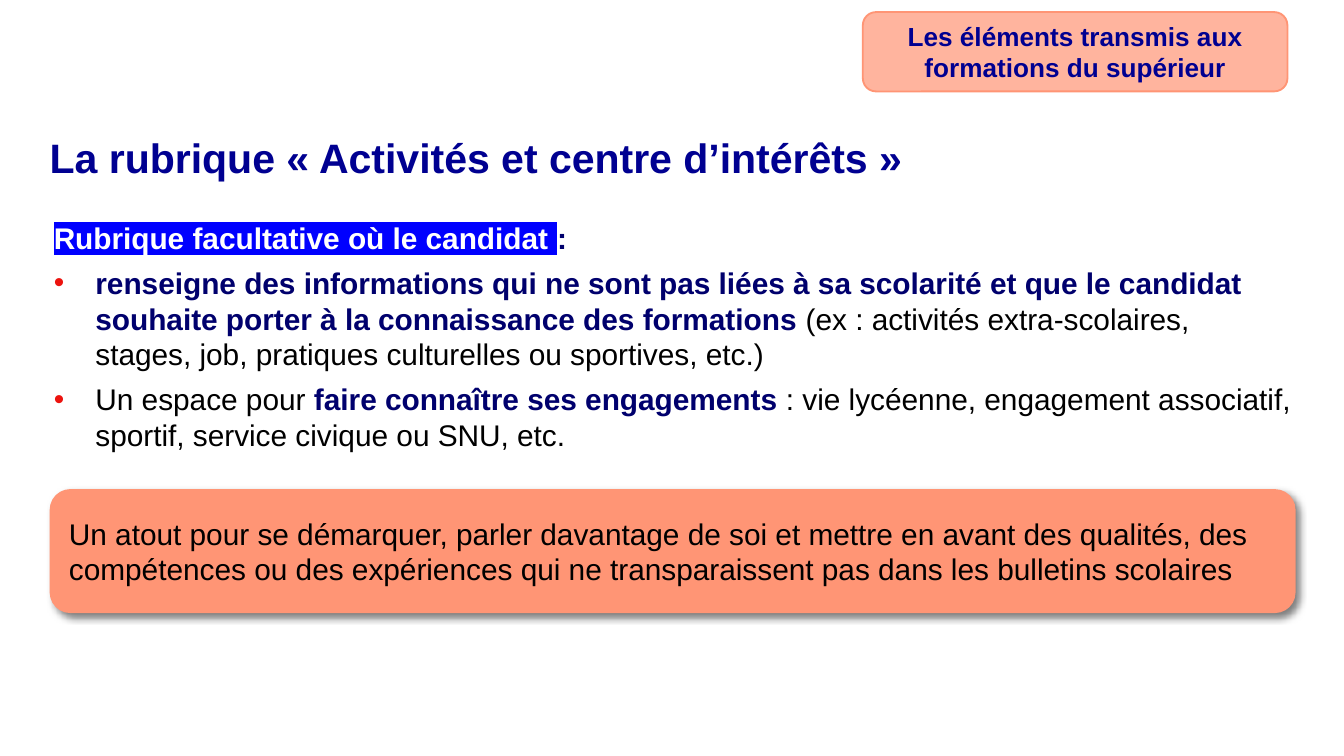
from dataclasses import dataclass

from lxml import etree
from pptx import Presentation, util as u
from pptx.dml.color import RGBColor
from pptx.enum import shapes, text
from pptx.oxml.ns import qn


@dataclass(frozen=True)
class Theme:
    font: str = "Arial"
    navy: str = "000091"
    ink: str = "00006D"
    black: str = "000000"
    white: str = "FFFFFF"
    marker: str = "0000FF"
    bullet: str = "EC130E"
    coral: str = "FF9575"
    title_size: int = 22
    body_size: int = 16
    tag_size: int = 14


THEME = Theme()
WIDTH = u.Inches(10)
HEIGHT = WIDTH * 9 // 16

TITLE_BOX = (0.037, 0.183, 0.921, 0.14)
BODY_BOX = (0.04, 0.29, 0.921, 0.539)
CALLOUT_BOX = (0.037, 0.647, 0.927, 0.164)
TAG_BOX = (0.642, 0.016, 0.316, 0.105)

STYLES = {
    "marked": (THEME.white, True),
    "strong": (THEME.ink, True),
    "plain": (THEME.black, False),
}
INTRO = [("Rubrique facultative où le candidat ", "marked"), (":", "strong")]
POINTS = [
    [
        ("renseigne des informations qui ne sont pas liées à sa scolarité et que le "
         "candidat souhaite porter à la connaissance des formations ", "strong"),
        ("(ex : activités extra-scolaires, stages, job, pratiques culturelles ou "
         "sportives, etc.)", "plain"),
    ],
    [
        ("Un espace pour ", "plain"),
        ("faire connaître ses engagements ", "strong"),
        (": vie lycéenne, engagement associatif, sportif, service civique ou SNU, etc.",
         "plain"),
    ],
]


def to_emu(box):
    return [round(share * side) for share, side in zip(box, (WIDTH, HEIGHT) * 2)]


def add_color(parent, tag, color):
    holder = etree.SubElement(parent, qn(tag))
    return etree.SubElement(holder, qn("a:srgbClr"), val=color)


def style_run(run, size, color, bold=False):
    run.font.name = THEME.font
    run.font.size = u.Pt(size)
    run.font.bold = bold
    run.font.color.rgb = RGBColor.from_string(color)


def clear_margins(frame):
    frame.margin_left = frame.margin_right = frame.margin_top = frame.margin_bottom = 0
    frame.word_wrap = True


def place_title(slide, box):
    title = slide.shapes.title
    title.left, title.top, title.width, title.height = to_emu(box)
    frame = title.text_frame
    clear_margins(frame)
    frame.auto_size = text.MSO_AUTO_SIZE.NONE
    frame.vertical_anchor = text.MSO_ANCHOR.TOP
    frame.text = "La rubrique « Activités et centre d’intérêts »"
    heading = frame.paragraphs[0]
    heading.alignment = text.PP_ALIGN.LEFT
    heading.line_spacing = 0.9
    style_run(heading.runs[0], THEME.title_size, THEME.navy, bold=True)


def add_bullet(paragraph):
    props = paragraph._p.get_or_add_pPr()
    indent = u.Inches(0.31)
    props.set("marL", str(indent))
    props.set("indent", str(-indent))
    add_color(props, "a:buClr", THEME.bullet)
    etree.SubElement(props, qn("a:buFont"), typeface=THEME.font)
    etree.SubElement(props, qn("a:buChar"), char="•")


def highlight(run):
    props = run._r.get_or_add_rPr()
    add_color(props, "a:highlight", THEME.marker)
    props.find(qn("a:solidFill")).addnext(props.find(qn("a:highlight")))


def place_body(slide, box):
    frame = slide.shapes.add_textbox(*to_emu(box)).text_frame
    clear_margins(frame)
    for index, passage in enumerate([INTRO, *POINTS]):
        paragraph = frame.add_paragraph() if index else frame.paragraphs[0]
        if index:
            add_bullet(paragraph)
        paragraph.space_after = u.Pt(5)
        for words, style in passage:
            run = paragraph.add_run()
            run.text = words
            style_run(run, THEME.body_size, *STYLES[style])
            if style == "marked":
                highlight(run)


def add_panel(slide, box, words, size, color, bold, alignment):
    panel = slide.shapes.add_shape(shapes.MSO_SHAPE.ROUNDED_RECTANGLE, *to_emu(box))
    panel.shadow.inherit = False
    panel.fill.solid()
    panel.fill.fore_color.rgb = RGBColor.from_string(THEME.coral)
    frame = panel.text_frame
    frame.word_wrap = True
    frame.vertical_anchor = text.MSO_ANCHOR.MIDDLE
    frame.text = words
    frame.paragraphs[0].alignment = alignment
    style_run(frame.paragraphs[0].runs[0], size, color, bold)
    return panel


def place_callout(slide, box):
    callout = add_panel(
        slide, box,
        "Un atout pour se démarquer, parler davantage de soi et mettre en avant des "
        "qualités, des compétences ou des expériences qui ne transparaissent pas dans "
        "les bulletins scolaires",
        THEME.body_size, THEME.black, False, text.PP_ALIGN.LEFT)
    callout.line.fill.background()
    effects = callout._element.spPr.find(qn("a:effectLst"))
    shade = add_color(effects, "a:outerShdw", THEME.black)
    etree.SubElement(shade, qn("a:alpha"), val="50000")
    shadow = shade.getparent()
    shadow.set("blurRad", str(u.Pt(4)))
    shadow.set("dist", str(u.Pt(3)))
    shadow.set("dir", str(45 * 60000))
    shadow.set("algn", "tl")
    shadow.set("rotWithShape", "0")


def place_tag(slide, box):
    tag = add_panel(
        slide, box, "Les éléments transmis aux formations du supérieur",
        THEME.tag_size, THEME.navy, True, text.PP_ALIGN.CENTER)
    tag.line.color.rgb = RGBColor.from_string(THEME.coral)
    tag.line.width = u.Pt(1)
    shade = tag._element.spPr.find(qn("a:solidFill")).find(qn("a:srgbClr"))
    etree.SubElement(shade, qn("a:alpha"), val="70000")


def main():
    deck = Presentation()
    deck.slide_width, deck.slide_height = WIDTH, HEIGHT
    slide = deck.slides.add_slide(deck.slide_layouts[5])
    place_title(slide, TITLE_BOX)
    place_body(slide, BODY_BOX)
    place_callout(slide, CALLOUT_BOX)
    place_tag(slide, TAG_BOX)
    deck.save("out.pptx")


if __name__ == "__main__":
    main()
